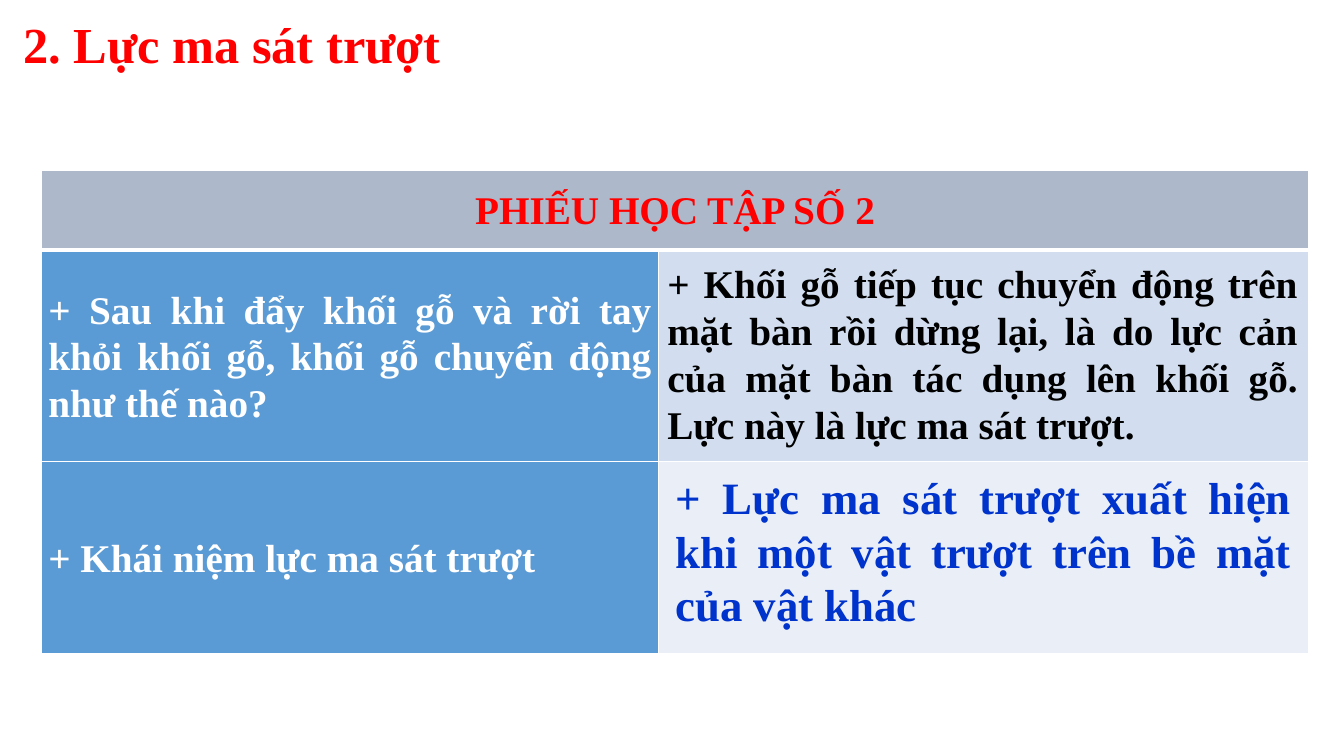
from lxml.etree import SubElement
from pptx import Presentation
from pptx.dml.color import RGBColor
from pptx.enum.text import MSO_ANCHOR as Anchor, MSO_AUTO_SIZE as AutoSize, PP_ALIGN as Align
from pptx.oxml.ns import qn
from pptx.util import Inches, Pt

FONT = "Times New Roman"
RED, WHITE, BLACK, BLUE = "FF0000", "FFFFFF", "000000", "0033CC"
QUESTION_FILL = "5B9BD5"

TITLE = ("2. Lực ma sát trượt", (0.13, 0.08, 4.75, 0.71))
TABLE_BOX = (0.41, 1.69, 12.57, 4.79)
COLUMN_WIDTHS = [6.12, 6.45]
ROW_HEIGHTS = [0.79, 2.1, 1.9]
HEADING = "PHIẾU HỌC TẬP SỐ 2"
QUESTIONS = [
    "+ Sau khi đẩy khối gỗ và rời tay khỏi khối gỗ, khối gỗ chuyển động như thế nào?",
    "+ Khái niệm lực ma sát trượt",
]
FILLS = [("ADB9CA", "ADB9CA"), (QUESTION_FILL, "D2DEEF"), (QUESTION_FILL, "EAEFF7")]
ANSWERS = [
    ("+ Khối gỗ tiếp tục chuyển động trên mặt bàn rồi dừng lại, là do lực cản "
     "của mặt bàn tác dụng lên khối gỗ. Lực này là lực ma sát trượt.",
     (6.52, 2.52, 6.45, 1.99), 28, BLACK),
    ("+ Lực ma sát trượt xuất hiện khi một vật trượt trên bề mặt của vật khác",
     (6.6, 4.61, 6.31, 1.72), 32, BLUE),
]


def color(value):
    return RGBColor.from_string(value)


def inches(box):
    return [Inches(length) for length in box]


def write(frame, text, size, text_color, align):
    paragraph = frame.paragraphs[0]
    paragraph.alignment = align
    run = paragraph.add_run()
    run.text = text
    run.font.name = FONT
    run.font.size = Pt(size)
    run.font.bold = True
    run.font.color.rgb = color(text_color)
    return paragraph


def format_frame(frame):
    frame.word_wrap = True
    frame.auto_size = AutoSize.SHAPE_TO_FIT_TEXT
    frame.vertical_anchor = Anchor.TOP


def add_border(cell, side, width):
    properties = cell._tc.get_or_add_tcPr()
    line = SubElement(properties, qn(f"a:ln{side}"), w=str(Pt(width)))
    fill = SubElement(line, qn("a:solidFill"))
    SubElement(fill, qn("a:srgbClr"), val=WHITE)


def format_cell(cell, row, fill):
    for side in "LRTB":
        heavy = (row, side) in [(0, "B"), (1, "T")]
        add_border(cell, side, 3 if heavy else 1)
    cell.fill.solid()
    cell.fill.fore_color.rgb = color(fill)
    cell.vertical_anchor = Anchor.MIDDLE
    cell.margin_left = cell.margin_right = Inches(0.07)
    cell.margin_top = cell.margin_bottom = 0


def add_worksheet(slide):
    table = slide.shapes.add_table(len(ROW_HEIGHTS), len(COLUMN_WIDTHS), *inches(TABLE_BOX)).table
    for column, width in zip(table.columns, COLUMN_WIDTHS):
        column.width = Inches(width)
    for row, height in zip(table.rows, ROW_HEIGHTS):
        row.height = Inches(height)
    for row, fills in enumerate(FILLS):
        for column, fill in enumerate(fills):
            format_cell(table.cell(row, column), row, fill)
    table.cell(0, 0).merge(table.cell(0, 1))
    entries = [(HEADING, RED, Align.CENTER)]
    entries += [(question, WHITE, Align.JUSTIFY) for question in QUESTIONS]
    for row, (text, text_color, align) in enumerate(entries):
        paragraph = write(table.cell(row, 0).text_frame, text, 28, text_color, align)
        paragraph.line_spacing = 1.07


def main():
    presentation = Presentation()
    presentation.slide_width, presentation.slide_height = inches((13.33, 7.5))
    slide = presentation.slides.add_slide(presentation.slide_layouts[5])

    text, box = TITLE
    title = slide.shapes.title
    title.left, title.top, title.width, title.height = inches(box)
    format_frame(title.text_frame)
    write(title.text_frame, text, 36, RED, Align.LEFT)

    add_worksheet(slide)
    for text, box, size, text_color in ANSWERS:
        frame = slide.shapes.add_textbox(*inches(box)).text_frame
        format_frame(frame)
        write(frame, text, size, text_color, Align.JUSTIFY)

    presentation.save("out.pptx")


if __name__ == "__main__":
    main()
